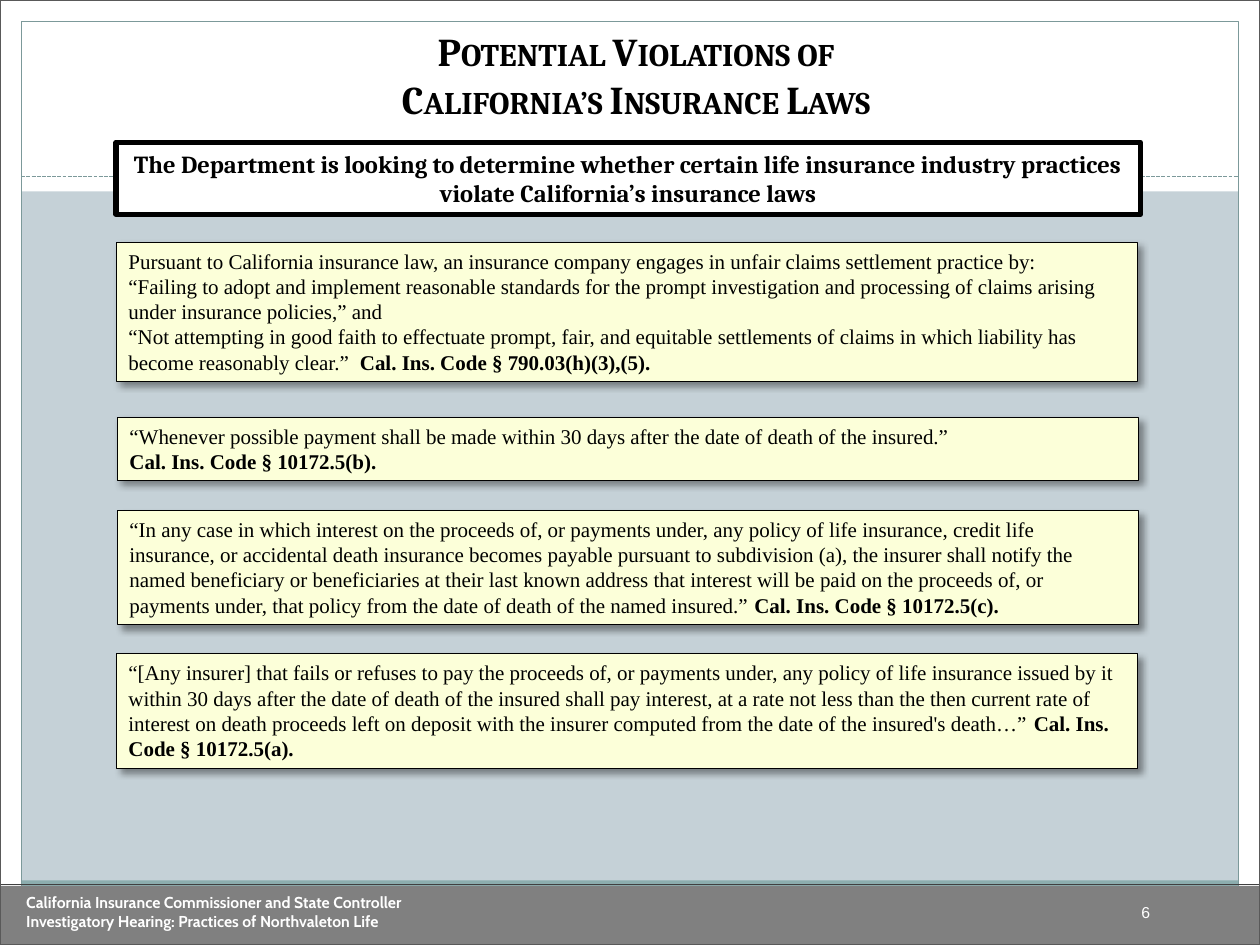
import dataclasses

import lxml.etree
import pptx
import pptx.dml.color
import pptx.enum.dml
import pptx.enum.shapes
import pptx.enum.text
import pptx.oxml.ns
import pptx.util

Cm, Pt = pptx.util.Cm, pptx.util.Pt
SHAPE = pptx.enum.shapes.MSO_SHAPE
ALIGN = pptx.enum.text.PP_ALIGN
ANCHOR = pptx.enum.text.MSO_ANCHOR
qn = pptx.oxml.ns.qn
WIDTH, HEIGHT = 25.4, 19.05
MARGIN = 0.43


@dataclasses.dataclass(frozen=True)
class Theme:
    background: str = "C5D1D7"
    white: str = "FFFFFF"
    black: str = "000000"
    note: str = "FCFFD9"
    band: str = "8CADAE"
    frame: str = "7C999A"
    footer: str = "808080"
    footer_rule: str = "404040"
    border: str = "595959"
    title_font: str = "Cambria"
    note_font: str = "Times New Roman"
    footer_font: str = "Cabin"
    number_font: str = "Arial"
    title_size: float = 22.5
    headline_size: float = 14
    note_size: float = 12
    footer_size: float = 9


def rgb(value):
    return pptx.dml.color.RGBColor.from_string(value)


class Deck:
    def __init__(self, theme):
        self.theme = theme
        self.prs = pptx.Presentation()
        self.prs.slide_width, self.prs.slide_height = Cm(WIDTH), Cm(HEIGHT)
        self.s = self.prs.slides.add_slide(self.prs.slide_layouts[5])
        fill = self.s.background.fill
        fill.solid()
        fill.fore_color.rgb = rgb(theme.background)

    def shape(self, box, fill=None, line=None, width=0.75, kind=SHAPE.RECTANGLE):
        sp = self.s.shapes.add_shape(kind, *map(Cm, box))
        sp.shadow.inherit = False
        if fill:
            sp.fill.solid()
            sp.fill.fore_color.rgb = rgb(fill)
        else:
            sp.fill.background()
        if line:
            sp.line.color.rgb = rgb(line)
            sp.line.width = Pt(width)
        else:
            sp.line.fill.background()
        return sp

    def rule(self, x1, x2, y, color, dash=None):
        cxn = self.s.shapes.add_connector(
            pptx.enum.shapes.MSO_CONNECTOR.STRAIGHT, Cm(x1), Cm(y), Cm(x2), Cm(y))
        cxn.line.color.rgb = rgb(color)
        cxn.line.width = Pt(0.75)
        cxn.line.dash_style = dash
        lxml.etree.SubElement(cxn.element.spPr, qn("a:effectLst"))

    def add_text(self, sp, paragraphs, font, size, color, bold=False,
                 align=ALIGN.LEFT, anchor=ANCHOR.TOP):
        """Each paragraph is a string or a list of (text, bold); newlines break lines."""
        tf = sp.text_frame
        tf.word_wrap = True
        tf.vertical_anchor = anchor
        for i, runs in enumerate(paragraphs):
            p = tf.paragraphs[0] if i == 0 else tf.add_paragraph()
            p.alignment = align
            for text, is_bold in [(runs, bold)] if isinstance(runs, str) else runs:
                for n, piece in enumerate(text.split("\n")):
                    if n:
                        p.add_line_break()
                    r = p.add_run()
                    r.text = piece
                    r.font.name, r.font.size = font, Pt(size)
                    r.font.bold = is_bold
                    r.font.color.rgb = rgb(color)

    def label(self, box, paragraphs, font, bold=False):
        sp = self.s.shapes.add_textbox(*map(Cm, box))
        self.add_text(sp, paragraphs, font, self.theme.footer_size, self.theme.white, bold)

    def title(self, box, text):
        t = self.theme
        sp = self.s.shapes.title
        sp.left, sp.top, sp.width, sp.height = map(Cm, box)
        self.add_text(sp, [text], t.title_font, t.title_size, t.black, True,
                      ALIGN.CENTER, ANCHOR.BOTTOM)
        for properties in sp.element.iter(qn("a:rPr")):
            properties.set("cap", "small")
        # The placeholder comes first in the tree; lift it above the backdrop.
        sp.element.getparent().append(sp.element)

    def headline(self, box, text):
        t = self.theme
        sp = self.shape(box, t.white, t.black, 3)
        self.add_text(sp, [text], t.title_font, t.headline_size, t.black, True,
                      ALIGN.CENTER)

    def note(self, box, paragraphs):
        t = self.theme
        sp = self.shape(box, t.note, t.black, 0.5)
        self.add_text(sp, paragraphs, t.note_font, t.note_size, t.black)
        effects = sp.element.spPr.find(qn("a:effectLst"))
        shadow = lxml.etree.SubElement(
            effects, qn("a:outerShdw"), blurRad=str(Pt(4)), dist=str(Pt(3)),
            dir=str(45 * 60000), algn="tl", rotWithShape="0")
        color = lxml.etree.SubElement(shadow, qn("a:srgbClr"), val=t.black)
        lxml.etree.SubElement(color, qn("a:alpha"), val="40000")

    def backdrop(self):
        t = self.theme
        for box in ((0, HEIGHT - MARGIN, WIDTH, MARGIN), (0, 0, WIDTH, 3.86),
                    (0, 0, MARGIN, HEIGHT), (WIDTH - MARGIN, 0, MARGIN, HEIGHT)):
            self.shape(box, t.white)
        inner = WIDTH - 2 * MARGIN
        self.shape((MARGIN, 17.75, inner, 0.86), t.band)
        self.shape((MARGIN, MARGIN, inner, HEIGHT - 2 * MARGIN), line=t.frame)
        self.rule(MARGIN, WIDTH - MARGIN, 3.56, t.frame,
                  pptx.enum.dml.MSO_LINE.SQUARE_DOT)
        self.shape((11.86, 2.67, 1.7, 1.7), t.white, kind=SHAPE.OVAL)

    def footer(self, lines, number):
        t = self.theme
        self.shape((0, 17.86, WIDTH, 1.19), t.footer)
        self.label((22.76, 18.08, 1.57, 0.64), [number], t.number_font)
        self.rule(0, WIDTH, 17.83, t.footer_rule)
        self.shape((0, 0, WIDTH, HEIGHT), line=t.border)
        self.label((0.28, 17.88, 15.09, 1.02), lines, t.footer_font, True)


# Left, top and height of each note, then its paragraphs.
NOTES = [
    (2.34, 4.88, 2.82, [
        "Pursuant to California insurance law, an insurance company engages in unfair "
        "claims settlement practice by:",
        "“Failing to adopt and implement reasonable standards for the prompt investigation "
        "and processing of claims arising under insurance policies,” and",
        [("“Not attempting in good faith to effectuate prompt, fair, and equitable "
          "settlements of claims in which liability has become reasonably clear.”  ", False),
         ("Cal. Ins. Code § 790.03(h)(3),(5).", True)]]),
    (2.36, 8.41, 1.27, [
        "“Whenever possible payment shall be made within 30 days after the date of death "
        "of the insured.”",
        [("Cal. Ins. Code § 10172.5(b).", True)]]),
    (2.36, 10.29, 2.31, [
        [("“In any case in which interest on the proceeds of, or payments under, any policy "
          "of life insurance, credit life insurance, or accidental death insurance becomes "
          "payable pursuant to subdivision (a), the insurer shall notify the named "
          "beneficiary or beneficiaries at their last known address that interest will be "
          "paid on the proceeds of, or payments under, that policy from the date of death "
          "of the named insured.” ", False),
         ("Cal. Ins. Code § 10172.5(c).", True)]]),
    (2.34, 13.18, 2.31, [
        [("“[Any insurer] that fails or refuses to pay the proceeds of, or payments under, "
          "any policy of life insurance issued by it within 30 days after the date of death "
          "of the insured shall pay interest, at a rate not less than the then current rate "
          "of interest on death proceeds left on deposit with the insurer computed from the "
          "date of the insured's death…” ", False),
         ("Cal. Ins. Code § 10172.5(a).", True)]]),
]


def main():
    deck = Deck(Theme())
    deck.backdrop()
    deck.footer(["California Insurance Commissioner and State Controller",
                 "Investigatory Hearing: Practices of Northvaleton Life"], "6")
    deck.headline((2.34, 2.87, 20.65, 1.45),
                  "The Department is looking to determine whether certain life insurance "
                  "industry practices violate California’s insurance laws")
    deck.title((0.53, 0.61, 24.59, 1.98),
               "Potential Violations of\nCalifornia’s Insurance Laws")
    for left, top, height, paragraphs in NOTES:
        deck.note((left, top, 20.6, height), paragraphs)
    deck.prs.save("out.pptx")


if __name__ == "__main__":
    main()
